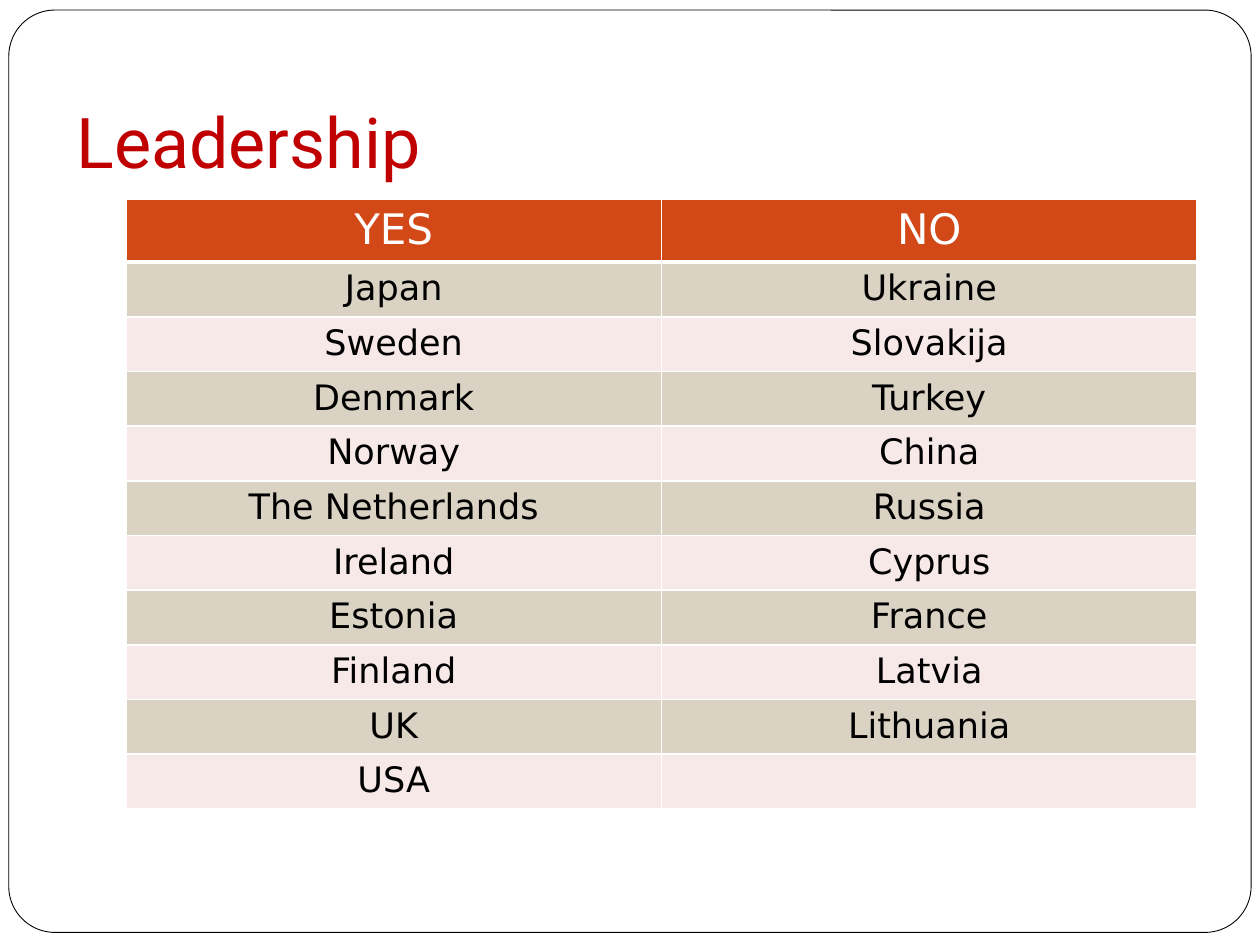
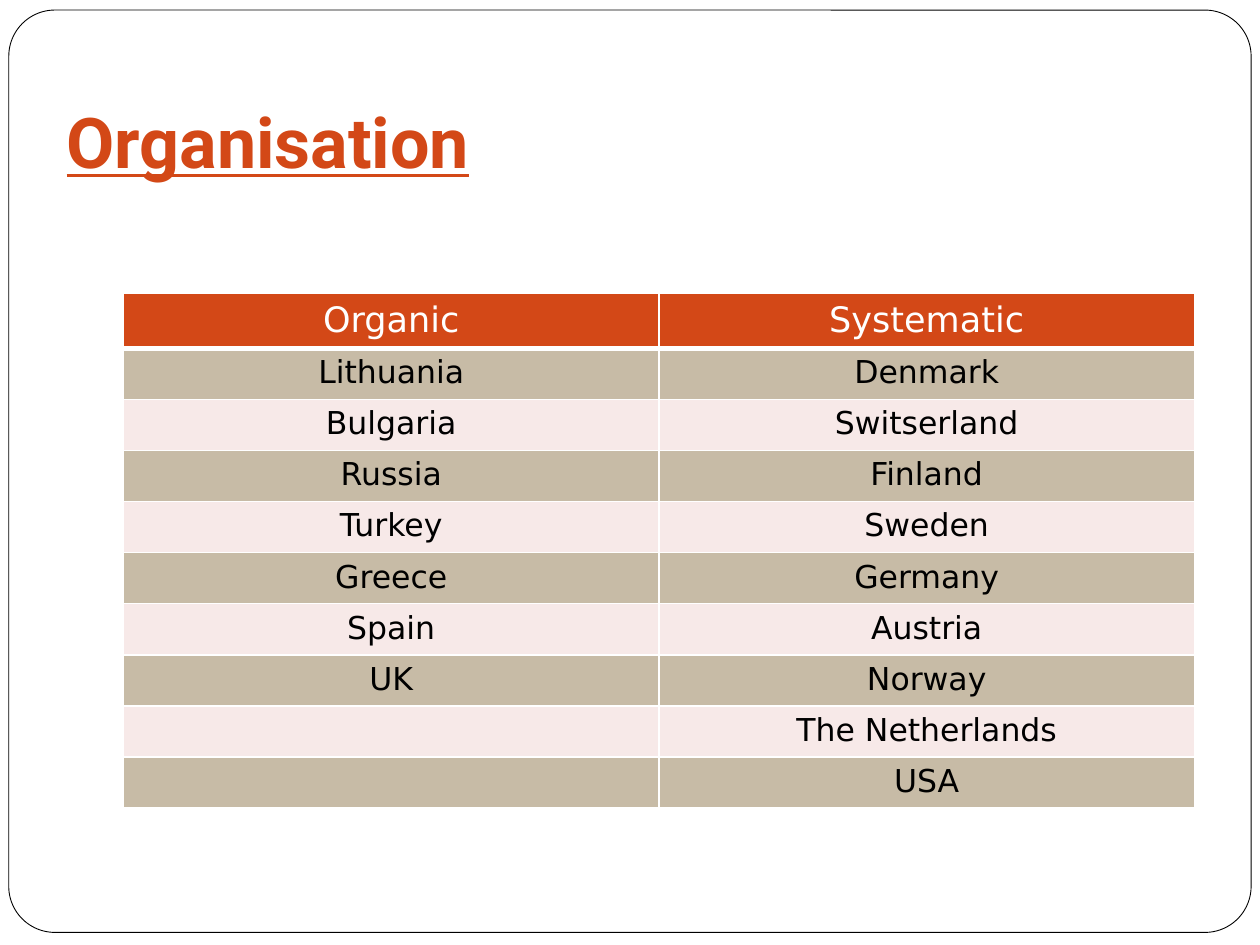
from dataclasses import dataclass
from itertools import zip_longest

from lxml.etree import SubElement
from pptx import Presentation
from pptx.dml.color import RGBColor
from pptx.enum.shapes import MSO_SHAPE
from pptx.enum.text import MSO_ANCHOR, PP_ALIGN
from pptx.oxml.ns import qn
from pptx.util import Inches, Pt


@dataclass(frozen=True)
class Theme:
    """Colours, fonts and sizes shared by the slides."""

    white: str = "FFFFFF"
    black: str = "000000"
    red: str = "C00000"
    orange: str = "D34817"
    sand: str = "DAD2C3"
    khaki: str = "C7BBA6"
    blush: str = "F7E9E8"
    title_font: str = "Roboto"
    table_font: str = "DejaVu Sans"
    title_size: int = 40
    large: int = 24
    medium: int = 20
    small: int = 18
    row_height: float = 29.2


THEME = Theme()
COLUMNS, ROWS = 10, 7.5
CELL = Inches(1)


def grid(*cells):
    """Turn grid columns and rows into lengths."""
    return [round(CELL * count) for count in cells]


def write(frame, text, *, font, size, color, align=PP_ALIGN.LEFT, bold=False, underline=False):
    """Put one formatted line of text into a text frame."""
    para = frame.paragraphs[0]
    para.alignment = align
    span = para.add_run()
    span.text = text
    span.font.name = font
    span.font.size = Pt(size)
    span.font.bold = bold
    span.font.underline = underline
    span.font.color.rgb = RGBColor.from_string(color)


def add_page(deck):
    """Add a blank white page with the rounded frame."""
    page = deck.slides.add_slide(deck.slide_layouts[6])
    margin_x, margin_y = 0.07, 0.08
    box = page.shapes.add_shape(
        MSO_SHAPE.ROUNDED_RECTANGLE,
        *grid(margin_x, margin_y, COLUMNS - 2 * margin_x, 7.32),
    )
    box.adjustments[0] = 0.05
    box.shadow.inherit = False
    box.fill.solid()
    box.fill.fore_color.rgb = RGBColor.from_string(THEME.white)
    box.line.color.rgb = RGBColor.from_string(THEME.black)
    box.line.width = Pt(0.5)
    return page


def add_title(page, text, left, **style):
    """Add a title that ends at the shared right margin."""
    box = page.shapes.add_textbox(*grid(left, 0.3, COLUMNS - 0.5 - left, 1.25))
    frame = box.text_frame
    frame.word_wrap = True
    frame.vertical_anchor = MSO_ANCHOR.BOTTOM
    frame.margin_left = frame.margin_right = frame.margin_bottom = Inches(0.1)
    frame.margin_top = Inches(0.05)
    write(frame, text, font=THEME.title_font, size=THEME.title_size, **style)


def set_borders(cell, bottom):
    """Draw white cell borders with the given bottom width in points."""
    properties = cell._tc.get_or_add_tcPr()
    for side, width in {"L": 1, "R": 1, "T": 1, "B": bottom}.items():
        line = SubElement(properties, qn(f"a:ln{side}"), w=str(Pt(width)))
        fill = SubElement(line, qn("a:solidFill"))
        SubElement(fill, qn("a:srgbClr"), val=THEME.white)


def add_country_table(page, left, top, lists, band, header_size, body_size):
    """Add one column of countries for each heading."""
    lines = [tuple(lists), *zip_longest(*lists.values(), fillvalue="")]
    height = Pt(THEME.row_height)
    table = page.shapes.add_table(
        len(lines), len(lists), *grid(left, top, 8.5), height * len(lines)
    ).table
    table.horz_banding = False
    for row, names in enumerate(lines):
        table.rows[row].height = height
        header = row == 0
        color = THEME.orange if header else (THEME.blush, band)[row % 2]
        for column, name in enumerate(names):
            cell = table.cell(row, column)
            set_borders(cell, 3 if header else 1)
            cell.fill.solid()
            cell.fill.fore_color.rgb = RGBColor.from_string(color)
            cell.margin_left = cell.margin_right = Inches(0.09)
            cell.margin_top = cell.margin_bottom = Inches(0.05)
            if name:
                write(
                    cell.text_frame,
                    name,
                    font=THEME.table_font,
                    size=header_size if header else body_size,
                    color=THEME.white if header else THEME.black,
                    align=PP_ALIGN.CENTER,
                )


def add_leadership(deck):
    """Build the leadership page."""
    page = add_page(deck)
    add_title(page, "Leadership", 0.51, color=THEME.red)
    countries = {
        "YES": ["Japan", "Sweden", "Denmark", "Norway", "The Netherlands",
                "Ireland", "Estonia", "Finland", "UK", "USA"],
        "NO": ["Ukraine", "Slovakija", "Turkey", "China", "Russia",
               "Cyprus", "France", "Latvia", "Lithuania"],
    }
    add_country_table(page, 1, 1.58, countries, THEME.sand, THEME.large, THEME.medium)


def add_organisation(deck):
    """Build the organisation page."""
    page = add_page(deck)
    add_title(page, "Organisation", 0.43, color=THEME.orange, bold=True, underline=True)
    countries = {
        "Organic": ["Lithuania", "Bulgaria", "Russia", "Turkey", "Greece",
                    "Spain", "UK"],
        "Systematic": ["Denmark", "Switserland", "Finland", "Sweden", "Germany",
                       "Austria", "Norway", "The Netherlands", "USA"],
    }
    add_country_table(page, 0.98, 2.33, countries, THEME.khaki, THEME.medium, THEME.small)


def main():
    """Build and save the deck."""
    deck = Presentation()
    deck.slide_width, deck.slide_height = grid(COLUMNS, ROWS)
    add_leadership(deck)
    add_organisation(deck)
    deck.save("out.pptx")


if __name__ == "__main__":
    main()
